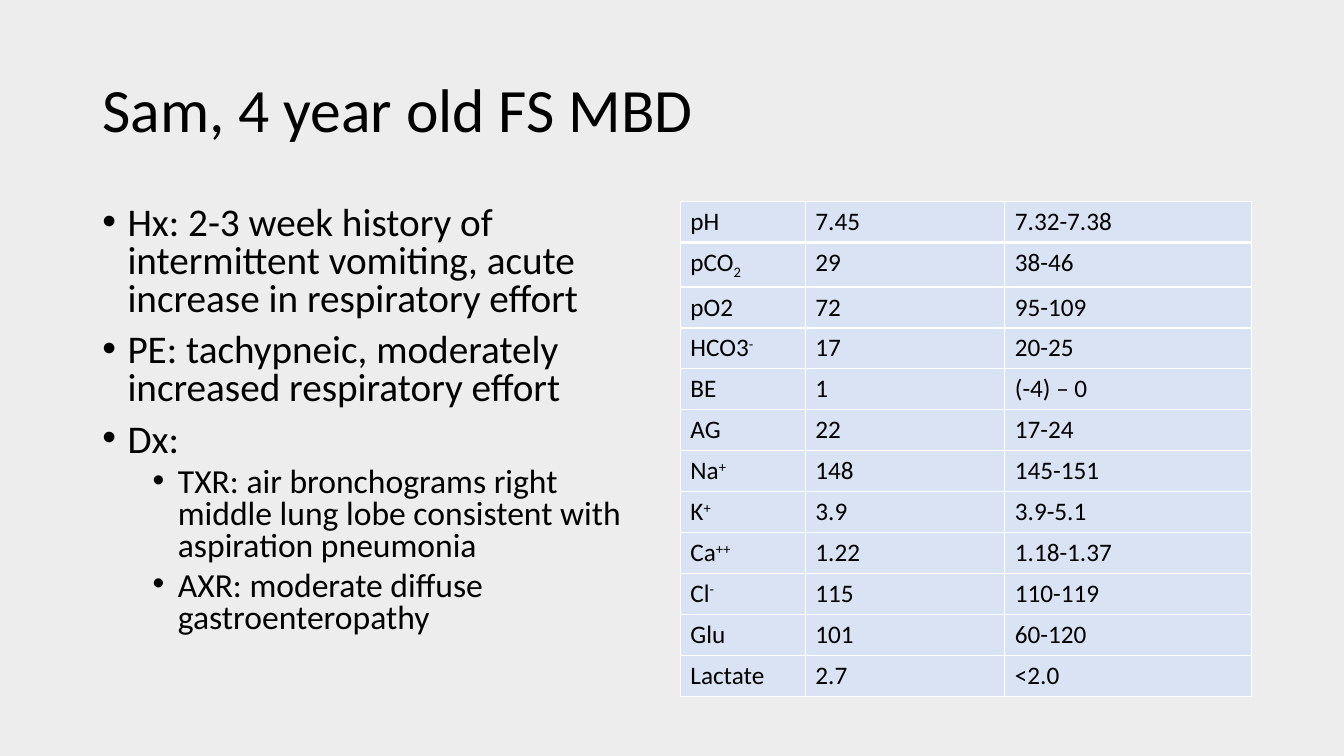
from dataclasses import dataclass

from lxml import etree
from pptx import Presentation
from pptx.dml.color import RGBColor
from pptx.enum import text
from pptx.oxml import ns
from pptx.util import Emu, Pt


@dataclass(frozen=True)
class Theme:
    font: str = "Calibri"
    ink: str = "000000"
    background: str = "EDEDED"
    cell: str = "DAE3F3"
    border: str = "FFFFFF"
    title: int = 44
    body: tuple = (28, 24)
    table: int = 18


THEME = Theme()
SUB, SUPER = -25, 30

FINDINGS = [
    (0, "Hx: 2-3 week history of intermittent vomiting, acute increase in respiratory effort"),
    (0, "PE: tachypneic, moderately increased respiratory effort"),
    (0, "Dx:"),
    (1, "TXR: air bronchograms right middle lung lobe consistent with aspiration pneumonia"),
    (1, "AXR: moderate diffuse gastroenteropathy"),
]

# Analyte (as text and baseline runs), result, reference range
BLOOD_GAS = [
    ([("pH", 0)], "7.45", "7.32-7.38"),
    ([("pCO", 0), ("2", SUB)], "29", "38-46"),
    ([("pO2", 0)], "72", "95-109"),
    ([("HCO3", 0), ("-", SUPER)], "17", "20-25"),
    ([("BE", 0)], "1", "(-4) – 0"),
    ([("AG", 0)], "22", "17-24"),
    ([("Na", 0), ("+", SUPER)], "148", "145-151"),
    ([("K", 0), ("+", SUPER)], "3.9", "3.9-5.1"),
    ([("Ca", 0), ("++", SUPER)], "1.22", "1.18-1.37"),
    ([("Cl", 0), ("-", SUPER)], "115", "110-119"),
    ([("Glu", 0)], "101", "60-120"),
    ([("Lactate", 0)], "2.7", "<2.0"),
]


def px(n):
    return Emu(n * 9525)


def apply(obj, values):
    for name, value in values.items():
        setattr(obj, name, value)


def add_run(p, content, size, baseline=0):
    r = p.add_run()
    r.text = content
    apply(r.font, {"name": THEME.font, "size": Pt(size)})
    r.font.color.rgb = RGBColor.from_string(THEME.ink)
    if baseline:
        r._r.get_or_add_rPr().set("baseline", str(baseline * 1000))


def add_text_box(slide, box, anchor):
    tf = slide.shapes.add_textbox(*map(px, box)).text_frame
    apply(tf, {"word_wrap": True, "vertical_anchor": anchor})
    return tf


def add_title(slide, content, box):
    p = add_text_box(slide, box, text.MSO_ANCHOR.MIDDLE).paragraphs[0]
    p.line_spacing = 0.9
    add_run(p, content, THEME.title)


def add_bullets(slide, items, box):
    tf = add_text_box(slide, box, text.MSO_ANCHOR.TOP)
    for i, (level, content) in enumerate(items):
        p = tf.add_paragraph() if i else tf.paragraphs[0]
        apply(p, {"level": level, "line_spacing": 0.8,
                  "space_before": Pt(5 if level else 10)})
        pPr = p._p.get_or_add_pPr()
        pPr.set("marL", str(px(24 + 48 * level)))
        pPr.set("indent", str(px(-24)))
        etree.SubElement(pPr, ns.qn("a:buFont"), typeface="Arial")
        etree.SubElement(pPr, ns.qn("a:buChar"), char="•")
        add_run(p, content, THEME.body[level])


def set_borders(cell, widths):
    tcPr = cell._tc.get_or_add_tcPr()
    for i, (side, width) in enumerate(widths.items()):
        ln = etree.Element(ns.qn(f"a:ln{side}"), w=str(Pt(width)))
        fill = etree.SubElement(ln, ns.qn("a:solidFill"))
        etree.SubElement(fill, ns.qn("a:srgbClr"), val=THEME.border)
        tcPr.insert(i, ln)


def add_table(slide, rows, left, top, widths, row_height):
    frame = slide.shapes.add_table(len(rows), len(widths), px(left), px(top),
                                   px(sum(widths)), px(row_height * len(rows)))
    table = frame.table
    apply(table, {"first_row": False, "horz_banding": False})
    for column, width in zip(table.columns, widths):
        column.width = px(width)
    for i, (analyte, *values) in enumerate(rows):
        table.rows[i].height = px(row_height)
        for j, runs in enumerate([analyte] + [[(v, 0)] for v in values]):
            cell = table.cell(i, j)
            cell.fill.solid()
            cell.fill.fore_color.rgb = RGBColor.from_string(THEME.cell)
            # A heavier rule sets off the first row
            set_borders(cell, {"L": 1, "R": 1, "T": 3 if i == 1 else 1,
                               "B": 3 if i == 0 else 1})
            for content, baseline in runs:
                add_run(cell.text_frame.paragraphs[0], content, THEME.table, baseline)


def main():
    prs = Presentation()
    apply(prs, {"slide_width": px(1280), "slide_height": px(720)})
    slide = prs.slides.add_slide(prs.slide_layouts[6])

    # Background
    fill = slide.background.fill
    fill.solid()
    fill.fore_color.rgb = RGBColor.from_string(THEME.background)

    # Patient, findings and blood gas results
    add_title(slide, "Sam, 4 year old FS MBD", (88, 38, 1104, 139))
    add_bullets(slide, FINDINGS, (88, 192, 544, 457))
    add_table(slide, BLOOD_GAS, 648, 192, (119, 190, 235), 39)

    prs.save("out.pptx")


if __name__ == "__main__":
    main()
